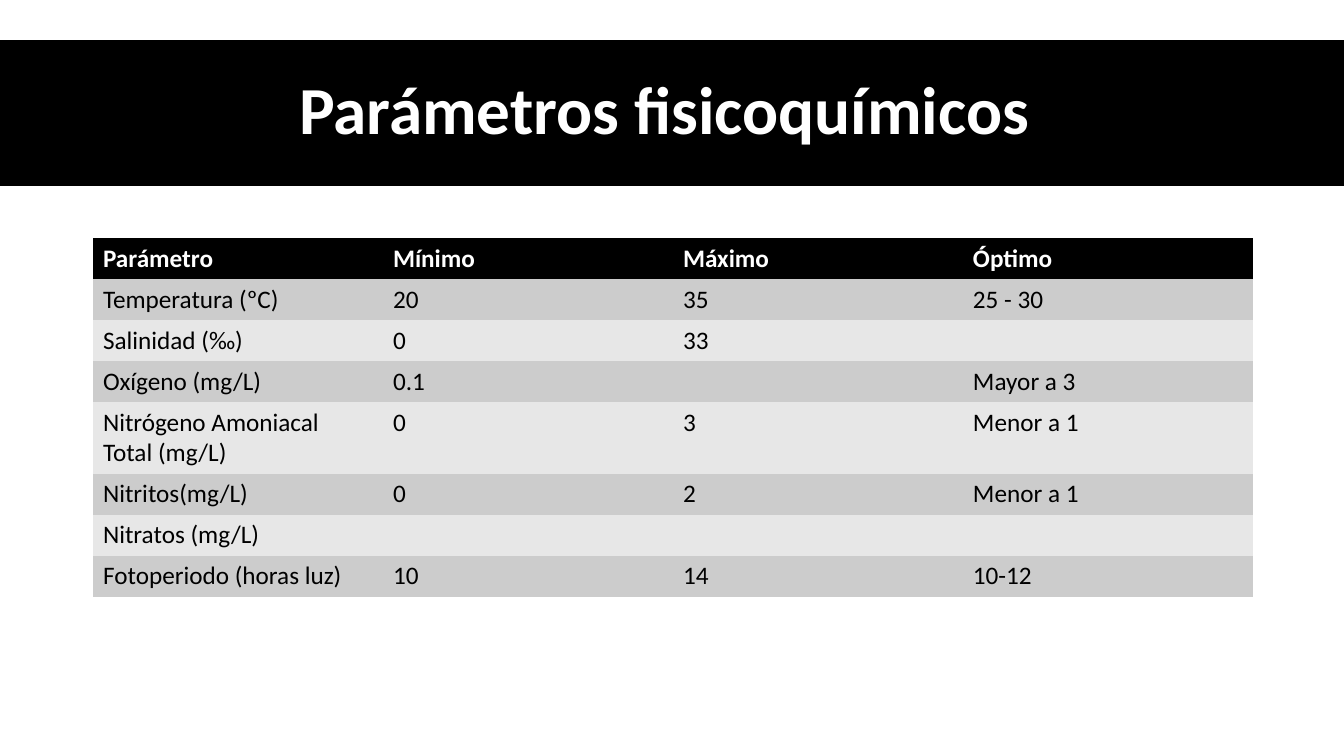
from dataclasses import dataclass

from pptx import Presentation
from pptx import util as u
from pptx.dml.color import RGBColor
from pptx.enum import shapes, text

PX = 914400 / 100.8
HUES = {"black": "000000", "white": "FFFFFF", "dark": "CCCCCC", "light": "E7E7E7"}
PLAIN = "{2D5ABB26-0587-4C30-8999-92F81FD0307C}"  # table style without grid


@dataclass(frozen=True)
class Box:
    left: int
    top: int
    width: int
    height: int

    def emu(self) -> list[int]:
        return [px(n) for n in (self.left, self.top, self.width, self.height)]


@dataclass(frozen=True)
class Look:
    fill: str
    ink: str
    size: int
    bold: bool


BAND = Box(0, 40, 1344, 146)
GRID = Box(93, 238, 1160, 328)
TITLE = Look("black", "white", 48, True)
HEAD = Look("black", "white", 18, True)
BODY = [Look("dark", "black", 18, False), Look("light", "black", 18, False)]

ROWS = [
    ("Parámetro", "Mínimo", "Máximo", "Óptimo"),
    ("Temperatura (ºC)", "20", "35", "25 - 30"),
    ("Salinidad (‰)", "0", "33", ""),
    ("Oxígeno (mg/L)", "0.1", "", "Mayor a 3"),
    ("Nitrógeno Amoniacal Total (mg/L)", "0", "3", "Menor a 1"),
    ("Nitritos(mg/L)", "0", "2", "Menor a 1"),
    ("Nitratos (mg/L)", "", "", ""),
    ("Fotoperiodo (horas luz)", "10", "14", "10-12"),
]


def px(n: float) -> int:
    return round(n * PX)


def hue(name: str) -> RGBColor:
    return RGBColor.from_string(HUES[name])


def dress(item, words: str, look: Look) -> None:
    """Fill a shape or table cell and write its styled text."""
    item.fill.solid()
    item.fill.fore_color.rgb = hue(look.fill)
    para = item.text_frame.paragraphs[0]
    if words:
        para.add_run().text = words
    style = {"name": "Calibri", "size": u.Pt(look.size), "bold": look.bold}
    for font in [para.font] + [run.font for run in para.runs]:
        for key, value in style.items():
            setattr(font, key, value)
        font.color.rgb = hue(look.ink)


def draw_band(slide) -> None:
    band = slide.shapes.add_shape(shapes.MSO_SHAPE.RECTANGLE, *BAND.emu())
    band.shadow.inherit = False
    band.line.fill.background()
    dress(band, "Parámetros fisicoquímicos ", TITLE)
    band.text_frame.vertical_anchor = text.MSO_ANCHOR.MIDDLE
    para = band.text_frame.paragraphs[0]
    for key, value in {"alignment": text.PP_ALIGN.CENTER, "line_spacing": 0.9}.items():
        setattr(para, key, value)


def draw_grid(slide) -> None:
    frame = slide.shapes.add_table(len(ROWS), len(ROWS[0]), *GRID.emu())
    table = frame.table
    table._tbl.tblPr.find("{*}tableStyleId").text = PLAIN
    for i, row in enumerate(ROWS):
        look = BODY[(i - 1) % 2] if i else HEAD
        for j, words in enumerate(row):
            dress(table.cell(i, j), words, look)


def main() -> None:
    deck = Presentation()
    deck.slide_width, deck.slide_height = px(1344), px(756)
    slide = deck.slides.add_slide(deck.slide_layouts[6])
    draw_band(slide)
    draw_grid(slide)
    deck.save("out.pptx")


if __name__ == "__main__":
    main()
